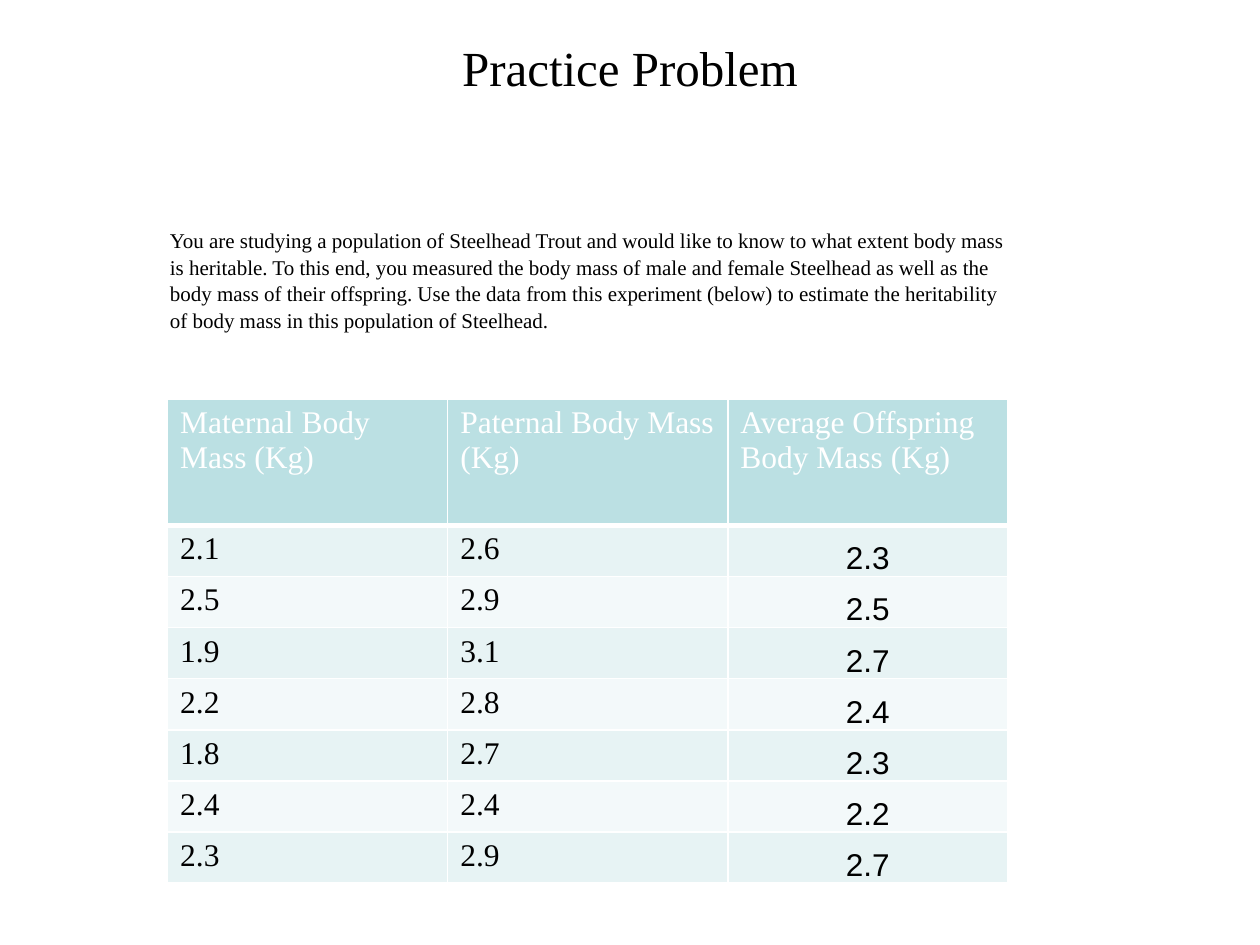
from dataclasses import dataclass
from pptx import Presentation, util as u
from pptx.dml.color import RGBColor
from pptx.enum import text as t
from pptx.oxml import parse_xml
from pptx.oxml.ns import nsdecls


@dataclass(frozen=True)
class Theme:
    serif: str = "Times New Roman"
    sans: str = "Arial"
    black: str = "000000"
    white: str = "FFFFFF"
    head: str = "BBE0E3"
    bands: tuple = ("E7F3F4", "F3F9FA")
    title: int = 28
    body: int = 12
    cell: int = 18


THEME = Theme()
STUDY = (
    "You are studying a population of Steelhead Trout and would like to know "
    "to what extent body mass is heritable. To this end, you measured the body "
    "mass of male and female Steelhead as well as the body mass of their "
    "offspring. Use the data from this experiment (below) to estimate the "
    "heritability of body mass in this population of Steelhead."
)
HEADS = ["Maternal Body Mass (Kg)", "Paternal Body Mass (Kg)",
         "Average Offspring Body Mass (Kg)"]
MASSES = [
    ("2.1", "2.6", "2.3"),
    ("2.5", "2.9", "2.5"),
    ("1.9", "3.1", "2.7"),
    ("2.2", "2.8", "2.4"),
    ("1.8", "2.7", "2.3"),
    ("2.4", "2.4", "2.2"),
    ("2.3", "2.9", "2.7"),
]


def write(frame, words, size, color=THEME.black, font=THEME.serif,
          align=t.PP_ALIGN.LEFT):
    frame.text = words
    para = frame.paragraphs[0]
    para.alignment = align
    para.font.name = font
    para.font.size = u.Pt(size)
    para.font.bold = False
    para.font.color.rgb = RGBColor.from_string(color)
    return para


def add_title(slide, words):
    title = slide.shapes.title
    title.left, title.top = u.Inches(0), u.Inches(0.25)
    title.width, title.height = u.Inches(10), u.Inches(0.57)
    title.text_frame.vertical_anchor = t.MSO_ANCHOR.TOP
    write(title.text_frame, words, THEME.title, align=t.PP_ALIGN.CENTER)


def add_text(slide, words):
    box = slide.shapes.add_textbox(u.Inches(1.25), u.Inches(1.75),
                                   u.Inches(6.92), u.Inches(0.91))
    box.text_frame.word_wrap = True
    write(box.text_frame, words, THEME.body).line_spacing = 1.05


def add_edges(cell, base):
    props = cell._tc.get_or_add_tcPr()
    for side, width in zip("LRTB", (1, 1, 1, base)):
        props.append(parse_xml(
            f'<a:ln{side} {nsdecls("a")} w="{u.Pt(width)}"><a:solidFill>'
            f'<a:srgbClr val="{THEME.white}"/></a:solidFill></a:ln{side}>'))


def fill_cell(cell, words, row, col):
    head = row == 0
    last = not head and col == len(HEADS) - 1
    add_edges(cell, 3 if head else 1)
    cell.fill.solid()
    cell.fill.fore_color.rgb = RGBColor.from_string(
        THEME.head if head else THEME.bands[(row - 1) % 2])
    cell.margin_left = cell.margin_right = u.Inches(0 if last else 0.1)
    cell.margin_top = cell.margin_bottom = u.Inches(0 if last else 0.05)
    cell.vertical_anchor = t.MSO_ANCHOR.BOTTOM if last else t.MSO_ANCHOR.TOP
    write(cell.text_frame, words, THEME.cell,
          THEME.white if head else THEME.black,
          THEME.sans if last else THEME.serif,
          t.PP_ALIGN.CENTER if last else t.PP_ALIGN.LEFT)


def add_masses(slide):
    rows = [HEADS, *MASSES]
    width, height, top = 6.67, 3.84, 1
    table = slide.shapes.add_table(
        len(rows), len(HEADS), u.Inches(1.33), u.Inches(3.17),
        u.Inches(width), u.Inches(height)).table
    for col in table.columns:
        col.width = u.Inches(width / len(HEADS))
    for row, words in enumerate(rows):
        table.rows[row].height = u.Inches(
            (height - top) / len(MASSES) if row else top)
        for col, word in enumerate(words):
            fill_cell(table.cell(row, col), word, row, col)


def main():
    deck = Presentation()
    deck.slide_width, deck.slide_height = u.Inches(10), u.Inches(7.5)
    slide = deck.slides.add_slide(deck.slide_layouts[5])
    add_title(slide, "Practice Problem")
    add_text(slide, STUDY)
    add_masses(slide)
    deck.save("out.pptx")


if __name__ == "__main__":
    main()
